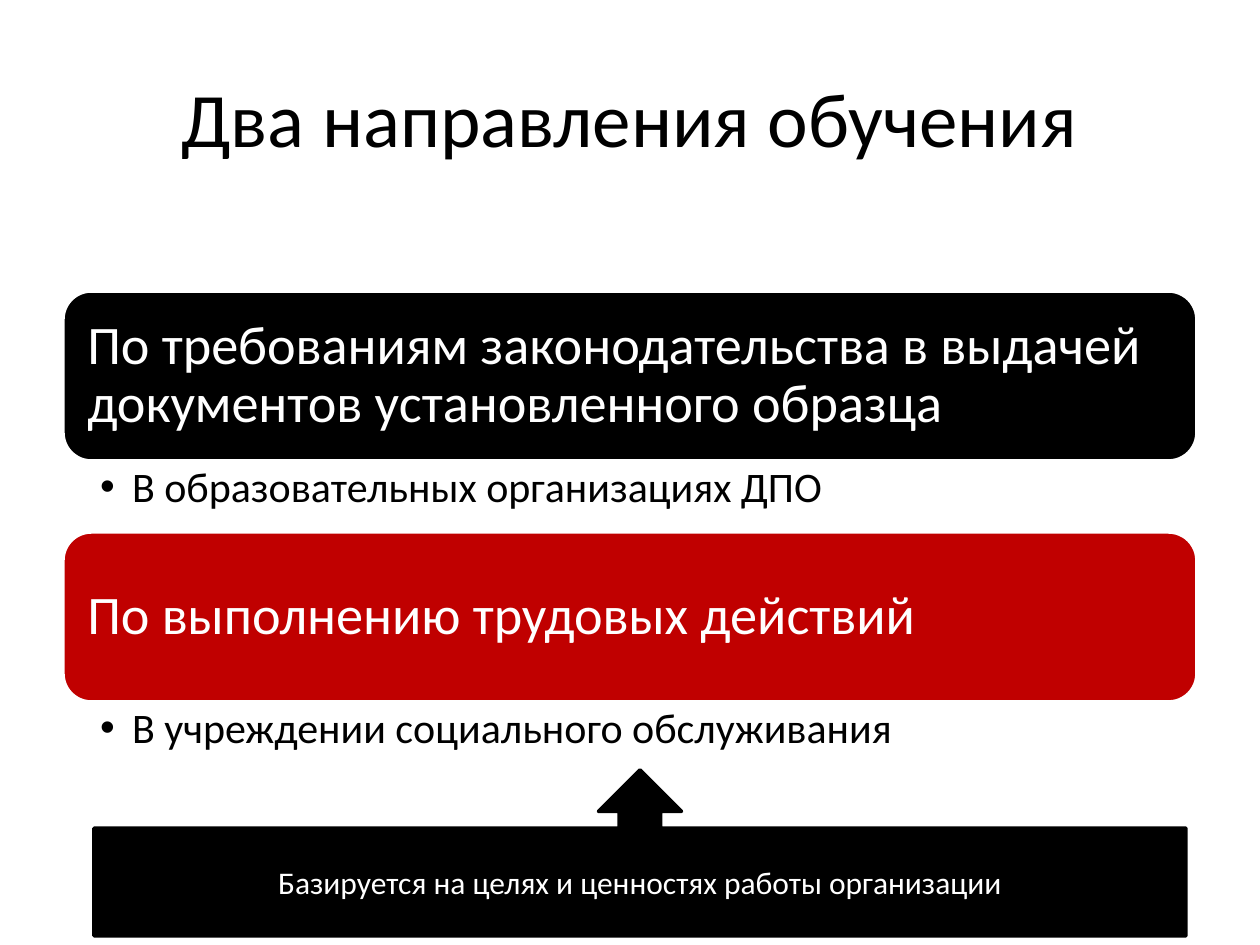
from dataclasses import dataclass

from pptx import Presentation
from pptx.dml.color import RGBColor
from pptx.enum.shapes import MSO_SHAPE
from pptx.enum.text import MSO_ANCHOR, MSO_AUTO_SIZE, PP_ALIGN
from pptx.util import Emu, Pt

TITLE = "Два направления обучения"
DIRECTIONS = [
    ("По требованиям законодательства в выдачей документов установленного образца",
     "В образовательных организациях ДПО", "black"),
    ("По выполнению трудовых действий",
     "В учреждении социального обслуживания", "red"),
]
FOUNDATION = "Базируется на целях и ценностях работы организации"


@dataclass(frozen=True)
class Theme:
    font: str = "Calibri"
    black: RGBColor = RGBColor(0, 0, 0)
    white: RGBColor = RGBColor(255, 255, 255)
    red: RGBColor = RGBColor(192, 0, 0)
    title_size: int = 44
    bar_size: int = 31
    bullet_size: int = 24
    foundation_size: int = 18
    line_width: int = 2


THEME = Theme()
PIXELS_PER_INCH = 126
LEFT, WIDTH = 63, 1134
BARS_TOP, BAR_HEIGHT, BULLET_HEIGHT = 291, 170, 71
BAR_INSETS = (16, 16, 16, 16)
BULLET_INSETS = (37, 5, 30, 5)
BULLET_INDENT = 32


def px(value):
    return Emu(round(value * 914400 / PIXELS_PER_INCH))


def place(shape, left, top, width, height):
    shape.left, shape.top = px(left), px(top)
    shape.width, shape.height = px(width), px(height)


def write(shape, text, size, color, alignment, anchor, insets=None):
    frame = shape.text_frame
    frame.text = text
    frame.word_wrap = True
    frame.auto_size = MSO_AUTO_SIZE.NONE
    frame.vertical_anchor = anchor
    if insets:
        (frame.margin_left, frame.margin_top,
         frame.margin_right, frame.margin_bottom) = map(px, insets)
    paragraph = frame.paragraphs[0]
    paragraph.alignment = alignment
    paragraph.font.name = THEME.font
    paragraph.font.size = Pt(size)
    paragraph.font.color.rgb = color
    return paragraph


def add_block(slide, kind, box, fill, line):
    shape = slide.shapes.add_shape(kind, *map(px, box))
    shape.shadow.inherit = False
    shape.fill.solid()
    shape.fill.fore_color.rgb = fill
    shape.line.color.rgb = line
    shape.line.width = Pt(THEME.line_width)
    return shape


def add_direction(slide, body, top, heading, bullet, color_name):
    bar = add_block(slide, MSO_SHAPE.ROUNDED_RECTANGLE, (LEFT, top, WIDTH, BAR_HEIGHT),
                    getattr(THEME, color_name), THEME.white)
    paragraph = write(bar, heading, THEME.bar_size, THEME.white,
                      PP_ALIGN.LEFT, MSO_ANCHOR.MIDDLE, BAR_INSETS)
    paragraph.line_spacing = 0.9

    place(body, LEFT, top + BAR_HEIGHT, WIDTH, BULLET_HEIGHT)
    paragraph = write(body, bullet, THEME.bullet_size, THEME.black,
                      PP_ALIGN.LEFT, MSO_ANCHOR.TOP, BULLET_INSETS)
    paragraph.line_spacing = 0.9
    paragraph.space_before = Pt(0)
    properties = paragraph._p.get_or_add_pPr()
    properties.set("marL", str(px(BULLET_INDENT)))
    properties.set("indent", str(-px(BULLET_INDENT)))


def main():
    presentation = Presentation()
    presentation.slide_width, presentation.slide_height = px(1260), px(945)
    two_content = presentation.slide_layouts[3]
    slide = presentation.slides.add_slide(two_content)

    title = slide.shapes.title
    place(title, LEFT, 38, WIDTH, 158)
    write(title, TITLE, THEME.title_size, THEME.black, PP_ALIGN.CENTER, MSO_ANCHOR.MIDDLE)

    for index, direction in enumerate(DIRECTIONS):
        top = BARS_TOP + index * (BAR_HEIGHT + BULLET_HEIGHT)
        add_direction(slide, slide.placeholders[index + 1], top, *direction)

    foundation = add_block(slide, MSO_SHAPE.UP_ARROW_CALLOUT, (94, 770, 1092, 166),
                           THEME.black, THEME.black)
    write(foundation, FOUNDATION, THEME.foundation_size, THEME.white,
          PP_ALIGN.CENTER, MSO_ANCHOR.MIDDLE)

    presentation.save("out.pptx")


if __name__ == "__main__":
    main()
